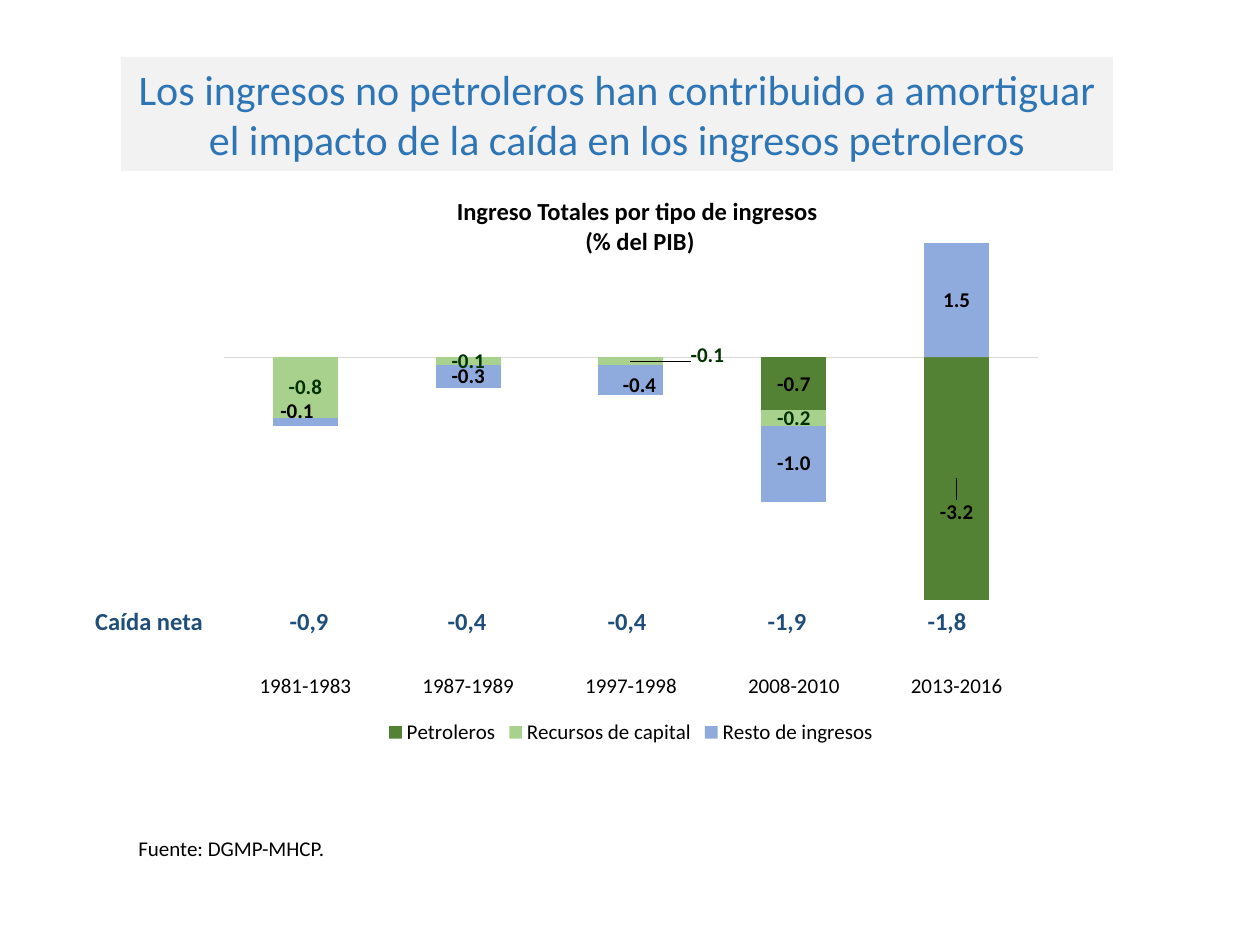
from copy import deepcopy

from pptx import Presentation
from pptx.chart.data import CategoryChartData
from pptx.dml.color import RGBColor
from pptx.enum.chart import XL_CHART_TYPE, XL_LEGEND_POSITION, XL_TICK_LABEL_POSITION, XL_TICK_MARK
from pptx.enum.text import MSO_ANCHOR, MSO_AUTO_SIZE, PP_ALIGN
from pptx.oxml import parse_xml
from pptx.oxml.ns import nsdecls, qn
from pptx.util import Emu, Pt

SCALE = 914400 / 126
COLORS = {
    "text": "000000", "title": "2E75B6", "panel": "F2F2F2", "net": "1F4E79",
    "white": "FFFFFF", "axis": "D9D9D9", "oil": "548235", "capital": "A9D18E",
    "rest": "8FAADC", "capital_label": "003300",
}
PERIODS = ["1981-1983", "1987-1989", "1997-1998", "2008-2010", "2013-2016"]
# Name, values, fill, label colour, hidden labels, moved labels {point: (x, y)}
SERIES = [
    ("Petroleros", [0, 0, 0, -0.7, -3.2], "oil", "text", [0, 1, 2], {4: (0, 0.06)}),
    ("Recursos de capital", [-0.8, -0.1, -0.1, -0.2, 0], "capital", "capital_label",
     [4], {2: (0.09, -0.01)}),
    ("Resto de ingresos", [-0.1, -0.3, -0.4, -1.0, 1.5], "rest", "text",
     [], {0: (-0.01, -0.02), 2: (0.01, 0.01)}),
]
NET_FALL = ["Caída neta", "-0,9", "-0,4", "-0,4", "-1,9", "-1,8"]


def px(length):
    return Emu(round(length * SCALE))


def color(name):
    return RGBColor.from_string(COLORS[name])


def layout_xml(inner=False, **fractions):
    target = '<c:layoutTarget val="inner"/>' if inner else ""
    modes = '<c:xMode val="edge"/><c:yMode val="edge"/>' if inner else ""
    parts = "".join(f'<c:{key} val="{value}"/>' for key, value in fractions.items())
    return parse_xml(f'<c:layout {nsdecls("c")}><c:manualLayout>{target}{modes}{parts}'
                     '</c:manualLayout></c:layout>')


class SlideBuilder:
    font_name = "Calibri"

    def __init__(self, page):
        self.page = page

    def style(self, font, size, name="text", bold=False):
        font.name, font.size, font.bold = self.font_name, Pt(size), bold
        font.color.rgb = color(name)

    def fill_text(self, frame, lines, size, name="text", bold=False, align=PP_ALIGN.LEFT):
        frame.text = "\n".join(lines)
        for para in frame.paragraphs:
            para.alignment = align
            for span in para.runs:
                self.style(span.font, size, name, bold)

    def title(self, text, left, top, width, height):
        box = self.page.shapes.title
        box.left, box.top, box.width, box.height = map(px, (left, top, width, height))
        box.fill.solid()
        box.fill.fore_color.rgb = color("panel")
        frame = box.text_frame
        frame.auto_size, frame.vertical_anchor = MSO_AUTO_SIZE.NONE, MSO_ANCHOR.TOP
        self.fill_text(frame, [text], 24, "title", align=PP_ALIGN.CENTER)

    def text(self, lines, left, top, width, height, size, wrap=True, **look):
        box = self.page.shapes.add_textbox(*map(px, (left, top, width, height)))
        box.text_frame.word_wrap = wrap
        self.fill_text(box.text_frame, lines, size, **look)

    def chart(self, left, top, width, height):
        data = CategoryChartData()
        data.categories = PERIODS
        for name, values, *_ in SERIES:
            data.add_series(name, values)
        chart = self.page.shapes.add_chart(
            XL_CHART_TYPE.COLUMN_STACKED, *map(px, (left, top, width, height)), data).chart
        self.style(chart.font, 12)
        chart.has_title = False
        chart.has_legend = True
        chart.legend.position = XL_LEGEND_POSITION.BOTTOM
        chart.legend.include_in_layout = False
        self.style(chart.legend.font, 12)

        # Axes
        periods, values = chart.category_axis, chart.value_axis
        periods.tick_label_position = XL_TICK_LABEL_POSITION.LOW
        periods.major_tick_mark = XL_TICK_MARK.NONE
        periods.format.line.color.rgb = color("axis")
        periods.format.line.width = Pt(0.75)
        self.style(periods.tick_labels.font, 12)
        values.minimum_scale, values.maximum_scale = -4, 2
        values.has_major_gridlines = False
        values.visible = False

        # Plot area and series
        plot = chart.plots[0]
        plot.gap_width, plot.overlap, plot.vary_by_categories = 150, 100, False
        area = chart._chartSpace.chart.plotArea
        for old in area.findall(qn("c:layout")):
            area.remove(old)
        area.insert(0, layout_xml(True, x=0.02, y=0.015, w=0.96, h=0.825))
        for series, (_, _, fill, label, hidden, moved) in zip(plot.series, SERIES):
            series.format.fill.solid()
            series.format.fill.fore_color.rgb = color(fill)
            series.invert_if_negative = False
            self.labels(series.data_labels, label, hidden, moved)

    def labels(self, labels, name, hidden, moved):
        labels.show_value = True
        labels.number_format, labels.number_format_is_linked = "#,##0.0", False
        self.style(labels.font, 12, name, True)
        group = labels._element
        shared = list(group)
        points = sorted([*hidden, *moved])
        for position, index in enumerate(points):
            point = parse_xml(f'<c:dLbl {nsdecls("c")}><c:idx val="{index}"/></c:dLbl>')
            if index in moved:
                x, y = moved[index]
                point.append(layout_xml(x=x, y=y))
                for part in shared:
                    if part.tag not in (qn("c:showLeaderLines"), qn("c:leaderLines")):
                        point.append(deepcopy(part))
            else:
                point.append(parse_xml(f'<c:delete {nsdecls("c")} val="1"/>'))
            group.insert(position, point)

    def table(self, values, widths, left, top, height):
        table = self.page.shapes.add_table(
            1, len(values), *map(px, (left, top, sum(widths), height))).table
        table.first_row = table.horz_banding = False
        for column, width, cell, value in zip(table.columns, widths, table.rows[0].cells, values):
            column.width = px(width)
            self.fill_text(cell.text_frame, [value], 14, "net", True, PP_ALIGN.CENTER)
            properties = cell._tc.get_or_add_tcPr()
            for side, points in (("L", 1), ("R", 1), ("T", 1), ("B", 3)):
                properties.append(parse_xml(
                    f'<a:ln{side} {nsdecls("a")} w="{Pt(points)}"><a:solidFill>'
                    f'<a:srgbClr val="{COLORS["white"]}"/></a:solidFill></a:ln{side}>'))
            cell.fill.solid()
            cell.fill.fore_color.rgb = color("white")


def main():
    deck = Presentation()
    deck.slide_width, deck.slide_height = px(1260), px(945)
    builder = SlideBuilder(deck.slides.add_slide(deck.slide_layouts[5]))

    # Chart and source
    builder.chart(207, 197, 848, 553)
    builder.text(["Fuente: DGMP-MHCP."], 126, 829, 255, 38, 12)

    # Headings
    builder.title("Los ingresos no petroleros han contribuido a amortiguar "
                  "el impacto de la caída en los ingresos petroleros", 121, 57, 992, 114)
    builder.text(["Ingreso Totales por tipo de ingresos ", "(% del PIB)"], 420, 190, 440, 72, 14,
                 wrap=False, bold=True, align=PP_ALIGN.CENTER)

    # Net fall under each column
    builder.table(NET_FALL, [164, 156] + [160] * 4, 67, 601, 53)
    deck.save("out.pptx")


if __name__ == "__main__":
    main()
